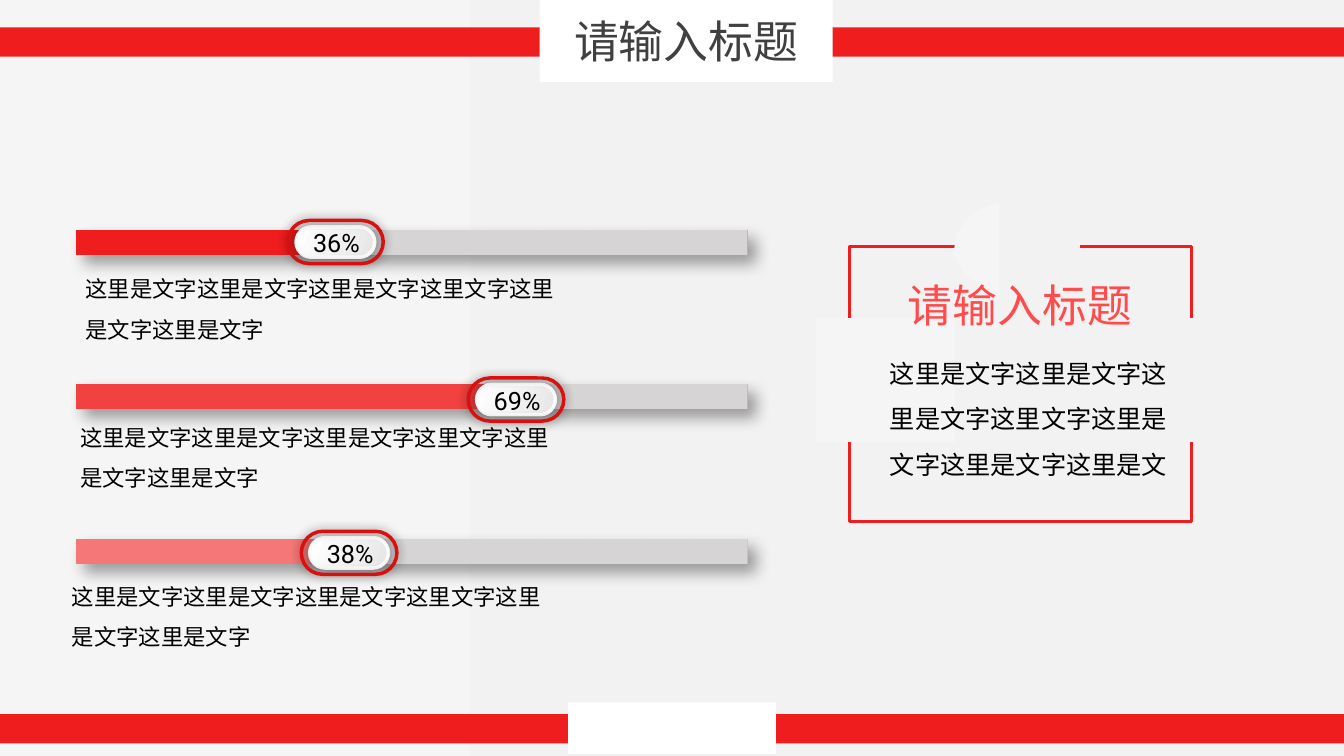
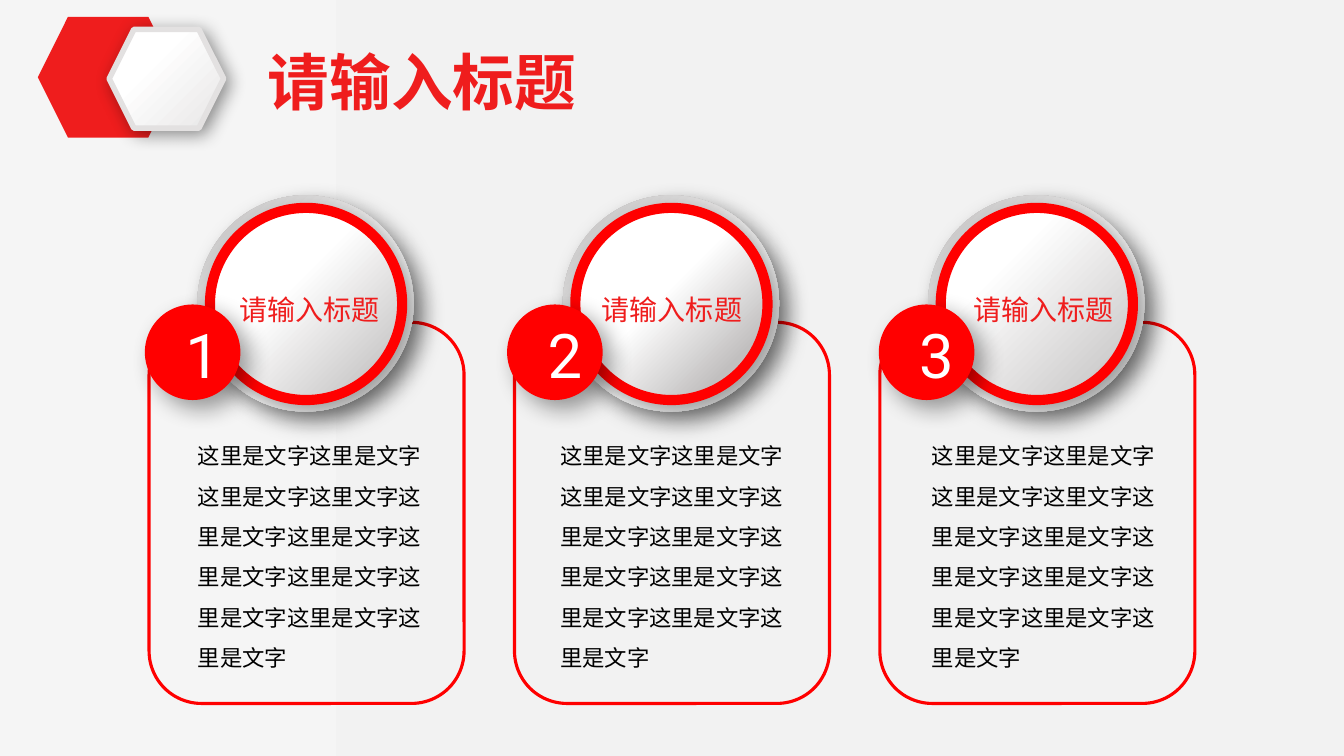
from lxml.etree import SubElement
from pptx import Presentation
from pptx.dml.color import RGBColor
from pptx.enum.shapes import MSO_SHAPE as SHAPE
from pptx.enum.text import MSO_ANCHOR as ANCHOR, MSO_AUTO_SIZE as AUTO_SIZE, PP_ALIGN as ALIGN
from pptx.oxml.ns import qn
from pptx.util import Pt

EMU_PER_PX = 9525
SLIDE_W, SLIDE_H = 1280, 720
TITLE_ONLY = 5
CJK, LATIN = "Noto Sans CJK SC", "Roboto"
COLORS = {
    "red": "EF1D1D", "mid_red": "F14141", "light_red": "F57777",
    "pure_red": "FF0000", "ring_red": "DA1010", "coral": "FF4B4B",
    "track": "D6D4D4", "silver": "C1BFBF", "pearl": "E7E6E6", "rim": "E3E1E1",
    "paper": "F2F2F2", "paper_light": "F5F5F5",
    "white": "FFFFFF", "black": "000000", "ink": "404040",
}
PAPER = ((20, "paper_light"), (50, "paper"), 0)

# Shadows: opacity %, blur pt, distance pt
BAR_SHADOW = (37, 11, 8)
KNOB_SHADOW = (41, 7, 0)
DISC_SHADOW = (38, 17, 9)
HEX_SHADOW = (43, 13, 4)

HEADING = "请输入标题"
PHRASE = "这里是文字"
OPENING = PHRASE * 3 + "这里文字"

# fill %, colour, label, knob left, knob drop, caption left, caption drop
BARS = [
    (36, "red", "36%", 274, -9, 72, 26),
    (65, "mid_red", "69%", 446, -6, 67, 20),
    (38, "light_red", "38%", 287, -7, 59, 25),
]
# number, gradient stops of the disc, sideways nudge of the texts
CARDS = [("1", 41, 94, 0), ("2", 45, 82, -3), ("3", 30, 100, 3)]


def px(*lengths):
    return [round(length * EMU_PER_PX) for length in lengths]


def rgb(color):
    return RGBColor.from_string(COLORS[color])


def paint(fill, look):
    """Apply None, a colour name, or (stop, stop, clockwise angle)."""
    if look is None:
        fill.background()
    elif isinstance(look, str):
        fill.solid()
        fill.fore_color.rgb = rgb(look)
    else:
        *stops, angle = look
        fill.gradient()
        fill.gradient_angle = (360 - angle) % 360
        for stop, (percent, color) in zip(fill.gradient_stops, stops):
            stop.position = percent / 100
            stop.color.rgb = rgb(color)


def cast_shadow(shape, opacity, blur, distance):
    effects = shape._element.spPr.find(qn("a:effectLst"))
    outer = SubElement(effects, qn("a:outerShdw"), blurRad=str(Pt(blur)),
                       dist=str(Pt(distance)), dir=str(45 * 60000),
                       algn="tl", rotWithShape="0")
    color = SubElement(outer, qn("a:srgbClr"), val=COLORS["black"])
    SubElement(color, qn("a:alpha"), val=str(opacity * 1000))


def add_shape(shapes, kind, box, fill=None, line=None, shadow=None):
    shape = shapes.add_shape(kind, *px(*box))
    paint(shape.fill, fill)
    if line:
        color, width = line
        shape.line.color.rgb = rgb(color)
        shape.line.width = Pt(width)
    else:
        shape.line.fill.background()
    shape.shadow.inherit = False
    if shadow:
        cast_shadow(shape, *shadow)
    return shape


def write(frame, text, size, color, font=CJK, align=ALIGN.CENTER, spacing=None, bold=None):
    paragraph = frame.paragraphs[0]
    paragraph.alignment = align
    paragraph.line_spacing = spacing
    run = paragraph.add_run()
    run.text = text
    run.font.size = Pt(size)
    run.font.bold = bold
    run.font.color.rgb = rgb(color)
    run.font.name = font
    SubElement(run._r.get_or_add_rPr(), qn("a:ea"), typeface=font)


def add_text(shapes, box, text, size, color="black", wrap=True, **style):
    frame = shapes.add_textbox(*px(*box)).text_frame
    frame.word_wrap = wrap
    frame.auto_size = AUTO_SIZE.SHAPE_TO_FIT_TEXT
    write(frame, text, size, color, **style)


def add_body(shapes, box, text, size=16):
    add_text(shapes, box, text, size, align=ALIGN.LEFT, spacing=1.5)


def new_slide(deck, first_stop):
    slide = deck.slides.add_slide(deck.slide_layouts[TITLE_ONLY])
    paint(slide.background.fill, ((first_stop, "paper_light"), (50, "paper"), 0))
    return slide


def place_title(slide, box, size, color, anchor, fill=None, bold=False):
    """Format the title placeholder and bring it in front of what is drawn so far."""
    title = slide.shapes.title
    title.left, title.top, title.width, title.height = px(*box)
    paint(title.fill, fill)
    frame = title.text_frame
    frame.auto_size = AUTO_SIZE.NONE
    frame.word_wrap = True
    frame.vertical_anchor = anchor
    write(frame, HEADING, size, color, bold=bold)
    slide.shapes._spTree.append(title._element)


def add_band(shapes, top):
    add_shape(shapes, SHAPE.RECTANGLE, (0, top, SLIDE_W, 28), "red")


def add_knob(shapes, left, top, label):
    knob = shapes.add_group_shape().shapes
    pill = add_shape(knob, SHAPE.ROUNDED_RECTANGLE, (left + 8, top + 6, 75, 29),
                     ((0, "white"), (100, "pearl"), 20), ("white", 2.5), KNOB_SHADOW)
    ring = add_shape(knob, SHAPE.ROUNDED_RECTANGLE, (left, top, 91, 41),
                     None, ("ring_red", 2.5), KNOB_SHADOW)
    for part in (pill, ring):
        part.adjustments[0] = 0.5
    add_text(shapes, (left - 4, top + 2, 101, 38), label, 18, font=LATIN)


def add_progress_bars(shapes, left, top, width, pitch):
    for row, (percent, color, *_) in enumerate(BARS):
        add_shape(shapes, SHAPE.RECTANGLE, (left, top + row * pitch, width, 24),
                  ((percent, color), (percent, "track"), 0), shadow=BAR_SHADOW)
    for row, (_, _, label, knob_left, knob_drop, caption_left, caption_drop) in enumerate(BARS):
        bar_top = top + row * pitch
        add_knob(shapes, knob_left, bar_top + knob_drop, label)
        add_body(shapes, (caption_left, bar_top + caption_drop, 470, 87),
                 OPENING + PHRASE * 2)


def add_bracket_panel(shapes, left, top, width, height):
    """A frame whose top and sides are interrupted by background-coloured masks."""
    frame = shapes.add_group_shape().shapes
    add_shape(frame, SHAPE.RECTANGLE, (left, top, width, height), line=("red", 2.25))
    add_shape(frame, SHAPE.OVAL, (left + 100, top - 44, 120, 89), PAPER)
    add_shape(frame, SHAPE.RECTANGLE, (left - 32, top + 68, width + 54, 118), PAPER)
    add_text(shapes, (left + 45, top + 25, 235, 61), HEADING, 32, "coral", wrap=False)
    add_body(shapes, (left + 29, top + 87, 285, 184),
             OPENING + PHRASE * 2 + "这里是文", 18)


def add_card(shapes, left, top, number, light_stop, dark_stop, nudge):
    card = shapes.add_group_shape().shapes
    add_shape(card, SHAPE.ROUNDED_RECTANGLE, (left, top, 300, 363), line=("pure_red", 2.25))
    add_shape(card, SHAPE.OVAL, (left + 46, top - 121, 206, 206),
              ((0, "silver"), (63, "white"), 45), shadow=DISC_SHADOW)
    add_shape(card, SHAPE.OVAL, (left + 58, top - 109, 183, 183),
              ((light_stop, "white"), (dark_stop, "silver"), 45),
              ("pure_red", 7.25), DISC_SHADOW)
    text_left = left + nudge
    add_shape(shapes, SHAPE.OVAL, (text_left - 4, top - 17, 91, 91),
              "pure_red", shadow=DISC_SHADOW)
    add_text(shapes, (text_left + 25, top - 10, 32, 81), number, 44, "white", font=LATIN)
    add_text(shapes, (text_left + 69, top - 33, 168, 42), HEADING, 20, "red")
    add_body(shapes, (text_left + 37, top + 97, 232, 242), OPENING + PHRASE * 7)


def add_hexagon_badge(shapes, left, top):
    add_shape(shapes, SHAPE.HEXAGON, (left, top, 134, 115), "red")
    add_shape(shapes, SHAPE.HEXAGON, (left + 68, top + 12, 109, 94),
              ((34, "white"), (100, "pearl"), 45), ("rim", 4), HEX_SHADOW)


def build_progress_slide(deck):
    slide = new_slide(deck, 20)
    shapes = slide.shapes
    add_progress_bars(shapes, 72, 219, 640, 147)
    add_bracket_panel(shapes, 809, 235, 326, 262)
    add_band(shapes, 26)
    place_title(slide, (514, 0, 279, 78), 32, "ink", ANCHOR.MIDDLE, "white")
    add_band(shapes, 680)
    add_shape(shapes, SHAPE.RECTANGLE, (541, 669, 198, 49), "white")


def build_cards_slide(deck):
    slide = new_slide(deck, 0)
    for column, card in enumerate(CARDS):
        add_card(slide.shapes, 142 + column * 348, 307, *card)
    add_hexagon_badge(slide.shapes, 36, 16)
    place_title(slide, (214, 37, 376, 81), 44, "red", ANCHOR.TOP, bold=True)


def main():
    deck = Presentation()
    deck.slide_width, deck.slide_height = px(SLIDE_W, SLIDE_H)
    build_progress_slide(deck)
    build_cards_slide(deck)
    deck.save("out.pptx")


if __name__ == "__main__":
    main()
